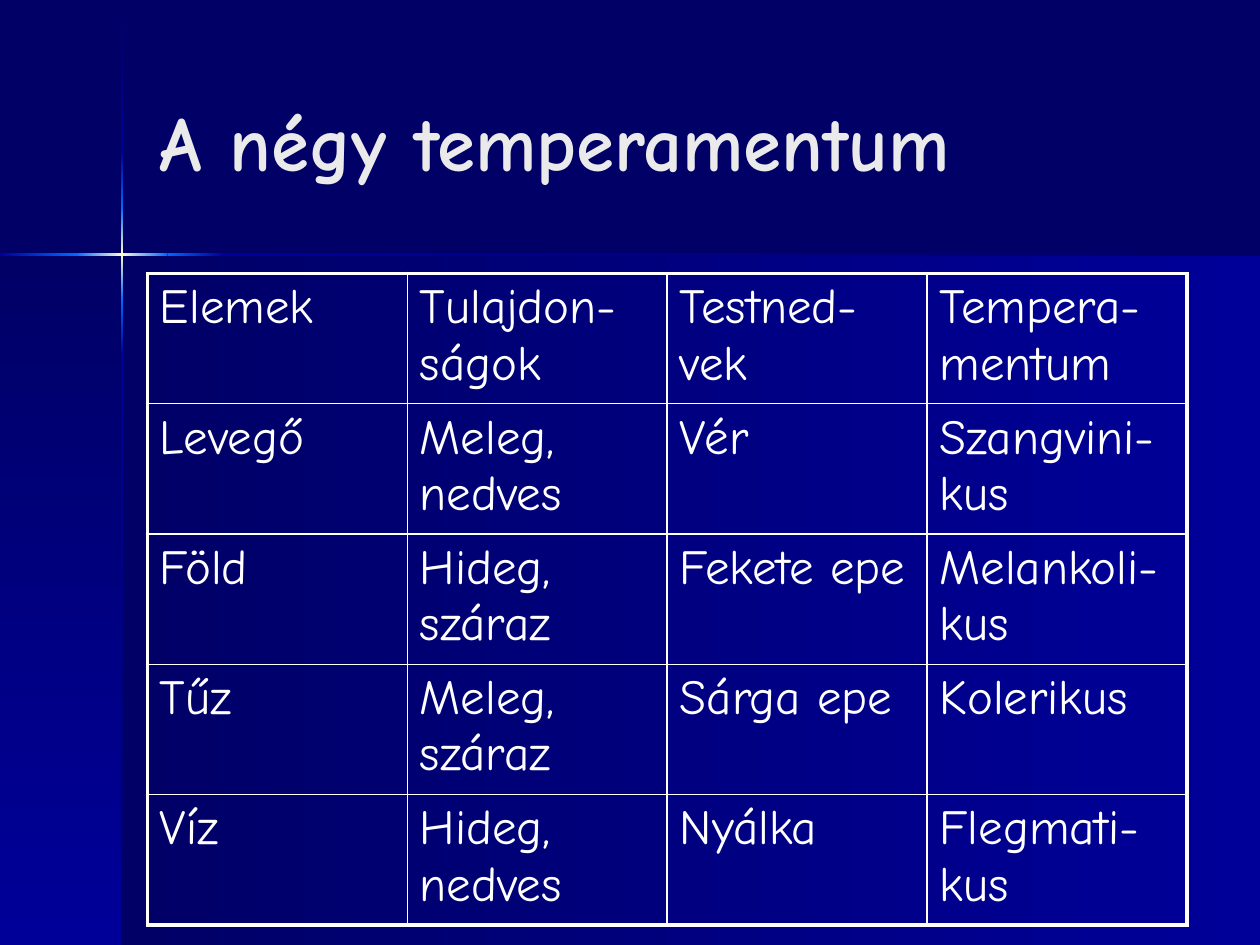
"""Builds the slide on the four temperaments."""
from copy import deepcopy
from itertools import pairwise

from pptx import Presentation
from pptx.dml.color import RGBColor
from pptx.enum.shapes import MSO_SHAPE as Shape
from pptx.enum.text import MSO_ANCHOR as Anchor
from pptx.oxml import parse_xml
from pptx.oxml.ns import nsdecls
from pptx.util import Cm, Pt

NIGHT = RGBColor(0x00, 0x00, 0x66)
ROYAL = RGBColor(0x00, 0x00, 0x99)
AZURE = RGBColor(0x00, 0x66, 0xFF)
CREAM = RGBColor(0xFF, 0xFF, 0xCC)
SILVER = RGBColor(0xEA, 0xEA, 0xEA)
WHITE = RGBColor(0xFF, 0xFF, 0xFF)

BEAM_COLOURS = [
    (NIGHT, ROYAL),
    (ROYAL, AZURE),
    (AZURE, CREAM, AZURE),
    (AZURE, ROYAL),
    (ROYAL, NIGHT),
]
BEAM_WIDTH = 0.05
VERTICAL_STOPS = [0.03, 3.07, 4.19, 6.05, 7.16, 19.05]
HORIZONTAL_STOPS = [0, 1.53, 3.38, 4.5, 25.4]

TEMPERAMENTS = [
    ["Elemek", "Tulajdon-ságok", "Testned-vek", "Tempera-mentum"],
    ["Levegő", "Meleg, nedves", "Vér", "Szangvini-kus"],
    ["Föld", "Hideg, száraz", "Fekete epe", "Melankoli-kus"],
    ["Tűz", "Meleg, száraz", "Sárga epe", "Kolerikus"],
    ["Víz", "Hideg, nedves", "Nyálka", "Flegmati-kus"],
]


class SlideBuilder:
    """Holds the style and the current slide."""

    font = "Comic Neue"
    outer_border = Pt(2.25)
    inner_border = Pt(1)

    def __init__(self, slide):
        self.slide = slide
        self.slide.background.fill.solid()
        self.slide.background.fill.fore_color.rgb = NIGHT

    def add_words(self, paragraph, words, size, colour, bold=False):
        run = paragraph.add_run()
        run.text = words
        run.font.name = self.font
        run.font.size = Pt(size)
        run.font.bold = bold
        run.font.color.rgb = colour

    def gradient(self, left, top, width, height, colours, downward=False):
        panel = self.slide.shapes.add_shape(
            Shape.RECTANGLE, Cm(left), Cm(top), Cm(width), Cm(height))
        panel.shadow.inherit = False
        panel.line.fill.background()
        panel.fill.gradient()
        panel.fill.gradient_angle = 270 if downward else 0
        stop_list = panel._element.xpath(".//a:gsLst")[0]
        for _ in colours[2:]:
            stop_list.insert(1, deepcopy(stop_list[0]))
        for index, (stop, colour) in enumerate(zip(panel.fill.gradient_stops, colours)):
            stop.color.rgb = colour
            stop.position = index / (len(colours) - 1)

    def title(self, left, top, width, height, words):
        heading = self.slide.shapes.add_textbox(Cm(left), Cm(top), Cm(width), Cm(height))
        frame = heading.text_frame
        frame.word_wrap = True
        frame.vertical_anchor = Anchor.MIDDLE
        self.add_words(frame.paragraphs[0], words, 44, SILVER, bold=True)

    def border(self, cell, sides):
        properties = cell._tc.get_or_add_tcPr()
        for index, (side, is_outer) in enumerate(sides.items()):
            width = self.outer_border if is_outer else self.inner_border
            properties.insert(index, parse_xml(
                f'<a:{side} {nsdecls("a")} w="{int(width)}"><a:solidFill>'
                f'<a:srgbClr val="{WHITE}"/></a:solidFill></a:{side}>'))

    def table(self, left, top, column_width, row_height, rows):
        last_row, last_column = len(rows) - 1, len(rows[0]) - 1
        grid = self.slide.shapes.add_table(
            len(rows), len(rows[0]), Cm(left), Cm(top),
            Cm(column_width * len(rows[0])), Cm(row_height * len(rows))).table
        grid.first_row = grid.horz_banding = False
        for column in grid.columns:
            column.width = Cm(column_width)
        for r, row in enumerate(rows):
            grid.rows[r].height = Cm(row_height)
            for c, words in enumerate(row):
                cell = grid.cell(r, c)
                cell.fill.background()
                self.add_words(cell.text_frame.paragraphs[0], words, 28, WHITE)
                self.border(cell, {"lnL": c == 0, "lnR": c == last_column,
                                   "lnT": r == 0, "lnB": r == last_row})


def main():
    presentation = Presentation()
    presentation.slide_width, presentation.slide_height = Cm(25.4), Cm(19.05)
    builder = SlideBuilder(presentation.slides.add_slide(presentation.slide_layouts[6]))

    builder.gradient(2.46, 5.13, 22.94, 13.92, (NIGHT, ROYAL))
    builder.gradient(0, 5.13, 2.46, 13.92, (NIGHT, ROYAL), downward=True)
    for (start, end), colours in zip(pairwise(VERTICAL_STOPS), BEAM_COLOURS):
        builder.gradient(2.44, start, BEAM_WIDTH, end - start, colours, downward=True)
    for (start, end), colours in zip(pairwise(HORIZONTAL_STOPS), BEAM_COLOURS[1:]):
        builder.gradient(start, 5.11, end - start, BEAM_WIDTH, colours)

    builder.title(2.97, 0.84, 20.95, 3.99, "A négy temperamentum")
    builder.table(2.97, 5.51, 5.24, 2.52, TEMPERAMENTS)
    presentation.save("out.pptx")


if __name__ == "__main__":
    main()
